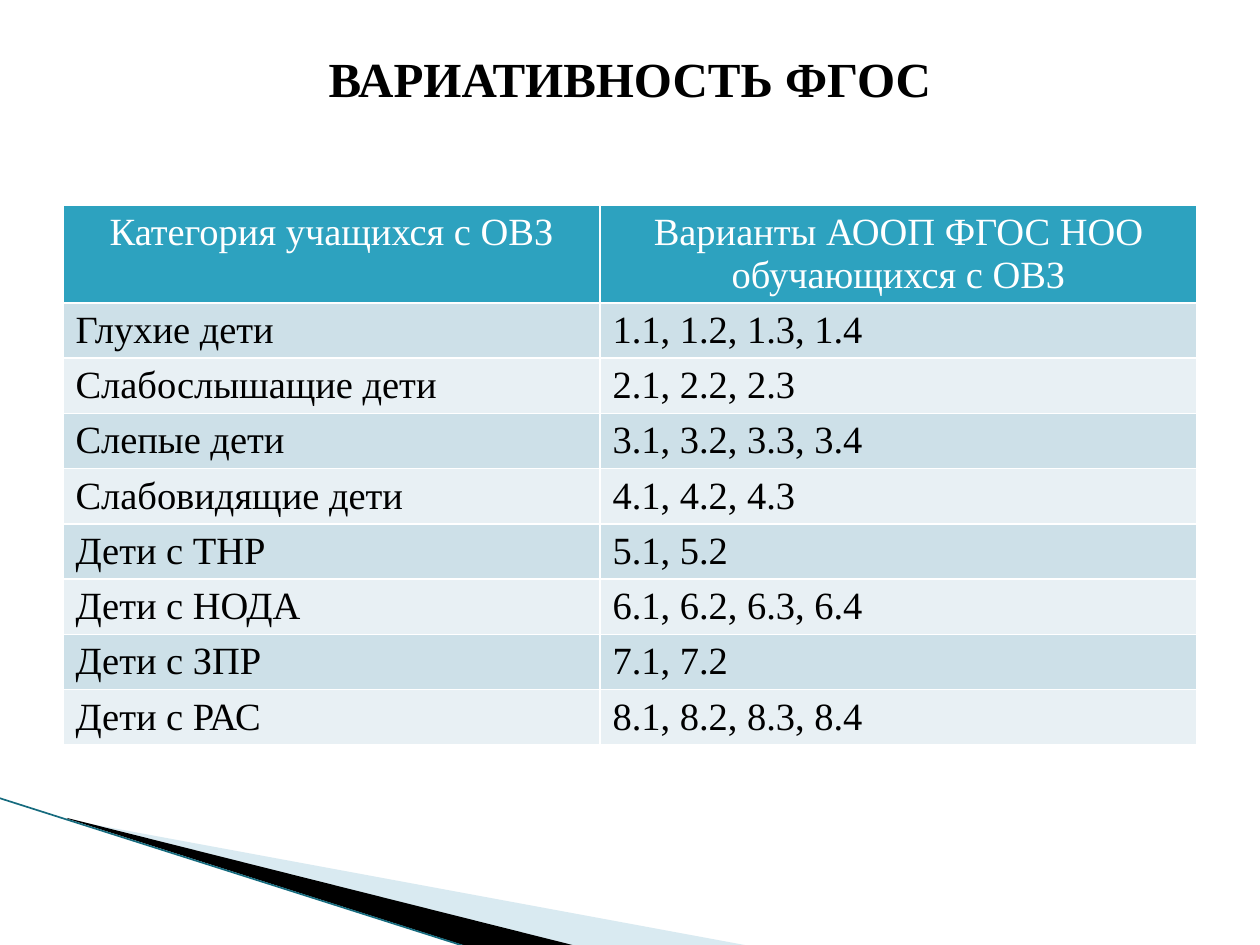
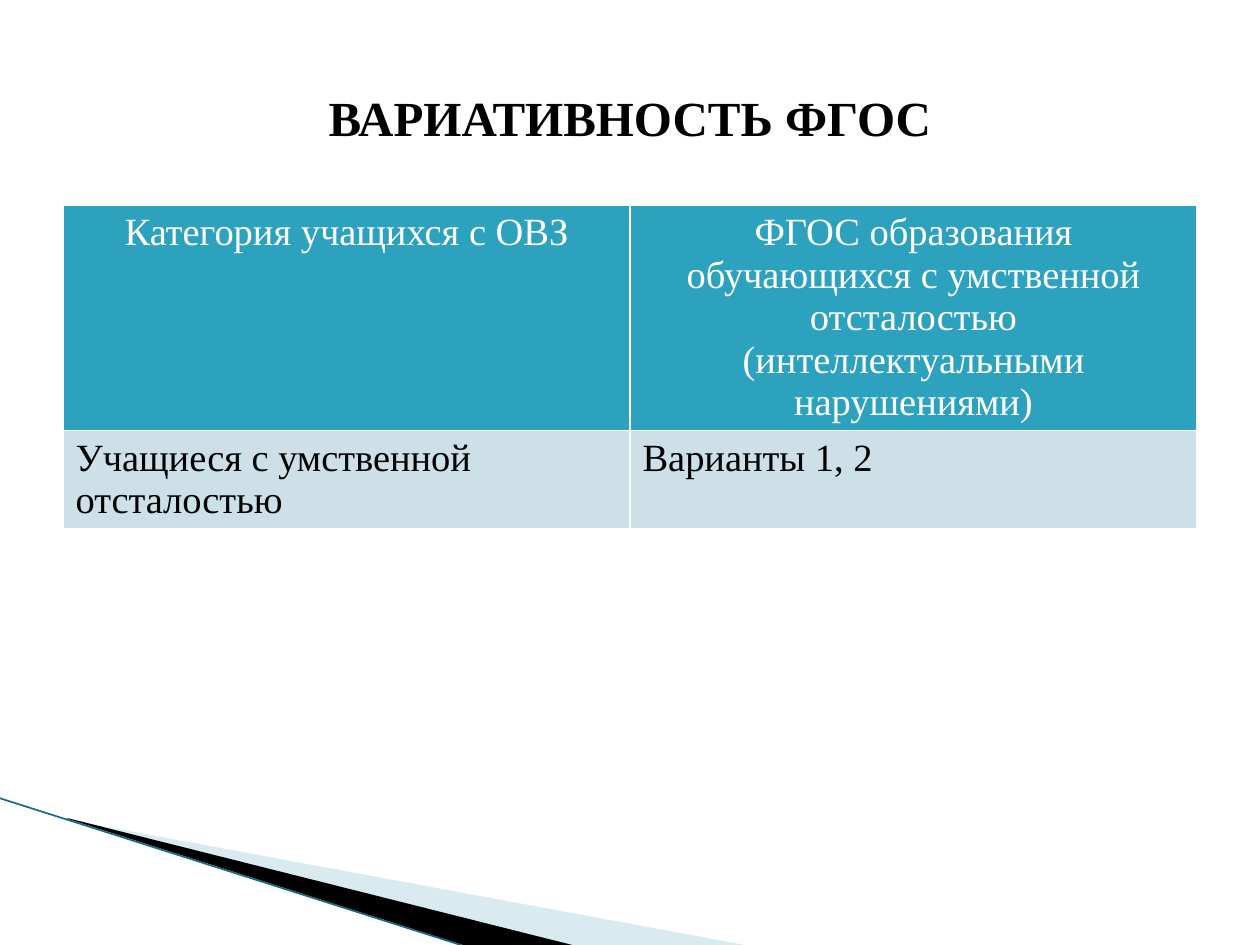
"""Build two slides on the variants of the education standard."""
from lxml import etree
from pptx import Presentation
from pptx.dml.color import RGBColor
from pptx.enum.shapes import MSO_CONNECTOR
from pptx.enum.text import MSO_ANCHOR, PP_ALIGN
from pptx.oxml import parse_xml
from pptx.oxml.ns import nsdecls, qn
from pptx.util import Emu, Pt

LINE = MSO_CONNECTOR.STRAIGHT
MIDDLE = MSO_ANCHOR.MIDDLE
LEFT, CENTER = PP_ALIGN.LEFT, PP_ALIGN.CENTER

WHITE = RGBColor(0xFF, 0xFF, 0xFF)
BLACK = RGBColor(0, 0, 0)
TEAL = RGBColor(0x2D, 0xA2, 0xBF)
DEEP = RGBColor(0x16, 0x6B, 0x7E)
SKY = RGBColor(0xA0, 0xCB, 0xDC)
BANDS = RGBColor(0xCD, 0xE0, 0xE8), RGBColor(0xE8, 0xF0, 0xF4)

FONT = "Times New Roman"
SCALE = 914400 / 126
SIDE, WIDTH = 63, 1134
TITLE = "ВАРИАТИВНОСТЬ ФГОС"
TITLE_TOP, TITLE_HIGH = 38, 157
TABLE_TOP = 205
INSET = 6

WEDGES = [
    ([(69, 820), (750, 946), (575, 946), (69, 819)], SKY, 40),
    ([(67, 818), (576, 946), (469, 947), (68, 819)], BLACK, 100),
]
EDGE = (-1, 798, 467, 947)

SLIDES = [
    {
        "lift": 77,
        "cols": (537, 597),
        "heights": (97, 55),
        "rows": [
            ("Категория учащихся с ОВЗ", "Варианты АООП ФГОС НОО обучающихся с ОВЗ"),
            ("Глухие дети", "1.1, 1.2, 1.3, 1.4"),
            ("Слабослышащие дети", "2.1, 2.2, 2.3"),
            ("Слепые дети", "3.1, 3.2, 3.3, 3.4"),
            ("Слабовидящие дети", "4.1, 4.2, 4.3"),
            ("Дети с ТНР", "5.1, 5.2"),
            ("Дети с НОДА", "6.1, 6.2, 6.3, 6.4"),
            ("Дети с ЗПР", "7.1, 7.2"),
            ("Дети с РАС", "8.1, 8.2, 8.3, 8.4"),
        ],
    },
    {
        "lift": 0,
        "cols": (567, 567),
        "heights": (225, 97),
        "rows": [
            (
                "Категория учащихся с ОВЗ",
                "ФГОС образования обучающихся с умственной отсталостью "
                "(интеллектуальными нарушениями)",
            ),
            ("Учащиеся с умственной отсталостью", "Варианты 1, 2"),
        ],
    },
]


def px(size):
    return Emu(round(size * SCALE))


def style(frame, size, color, align, bold=False):
    for para in frame.paragraphs:
        para.alignment = align
        for run in para.runs:
            font = run.font
            font.name, font.size, font.bold = FONT, Pt(size), bold
            font.color.rgb = color


def add_decor(slide):
    for points, color, alpha in WEDGES:
        path = slide.shapes.build_freeform(*points[0], scale=SCALE)
        path.add_line_segments(points[1:])
        wedge = path.convert_to_shape()
        wedge.shadow.inherit = False
        wedge.line.fill.background()
        wedge.fill.solid()
        wedge.fill.fore_color.rgb = color
        if alpha < 100:
            tone = wedge.fill._xPr.find(".//" + qn("a:srgbClr"))
            etree.SubElement(tone, qn("a:alpha"), val=str(alpha * 1000))
    edge = slide.shapes.add_connector(LINE, *map(px, EDGE))
    edge.line.color.rgb = DEEP
    edge.line.width = Pt(0.95)
    etree.SubElement(edge._element.spPr, qn("a:effectLst"))


def add_title(slide, lift):
    box = slide.shapes.add_textbox(*map(px, (SIDE, TITLE_TOP, WIDTH, TITLE_HIGH)))
    frame = box.text_frame
    frame.word_wrap = True
    frame.vertical_anchor = MIDDLE
    frame.margin_top = px(INSET)
    frame.margin_bottom = px(INSET + lift)
    frame.text = TITLE
    style(frame, 28, BLACK, CENTER, True)


def add_border(cell):
    props = cell._tc.get_or_add_tcPr()
    for side in "LRTB":
        props.append(parse_xml(
            f'<a:ln{side} {nsdecls("a")} w="12700"><a:solidFill>'
            f'<a:srgbClr val="{WHITE}"/></a:solidFill></a:ln{side}>'
        ))


def add_grid(slide, rows, cols, heights):
    highs = [heights[0]] + [heights[1]] * (len(rows) - 1)
    place = map(px, (SIDE, TABLE_TOP, sum(cols), sum(highs)))
    table = slide.shapes.add_table(len(rows), len(cols), *place).table
    for col, wide in zip(table.columns, cols):
        col.width = px(wide)
    for i, (texts, high) in enumerate(zip(rows, highs)):
        table.rows[i].height = px(high)
        fill, color, align = (BANDS[(i - 1) % 2], BLACK, LEFT) if i else (TEAL, WHITE, CENTER)
        for j, text in enumerate(texts):
            cell = table.cell(i, j)
            add_border(cell)
            cell.fill.solid()
            cell.fill.fore_color.rgb = fill
            cell.text_frame.text = text
            style(cell.text_frame, 22, color, align)


def main():
    deck = Presentation()
    deck.slide_width, deck.slide_height = px(1260), px(945)
    for item in SLIDES:
        slide = deck.slides.add_slide(deck.slide_layouts[6])
        add_decor(slide)
        add_grid(slide, item["rows"], item["cols"], item["heights"])
        add_title(slide, item["lift"])
    deck.save("out.pptx")


if __name__ == "__main__":
    main()
